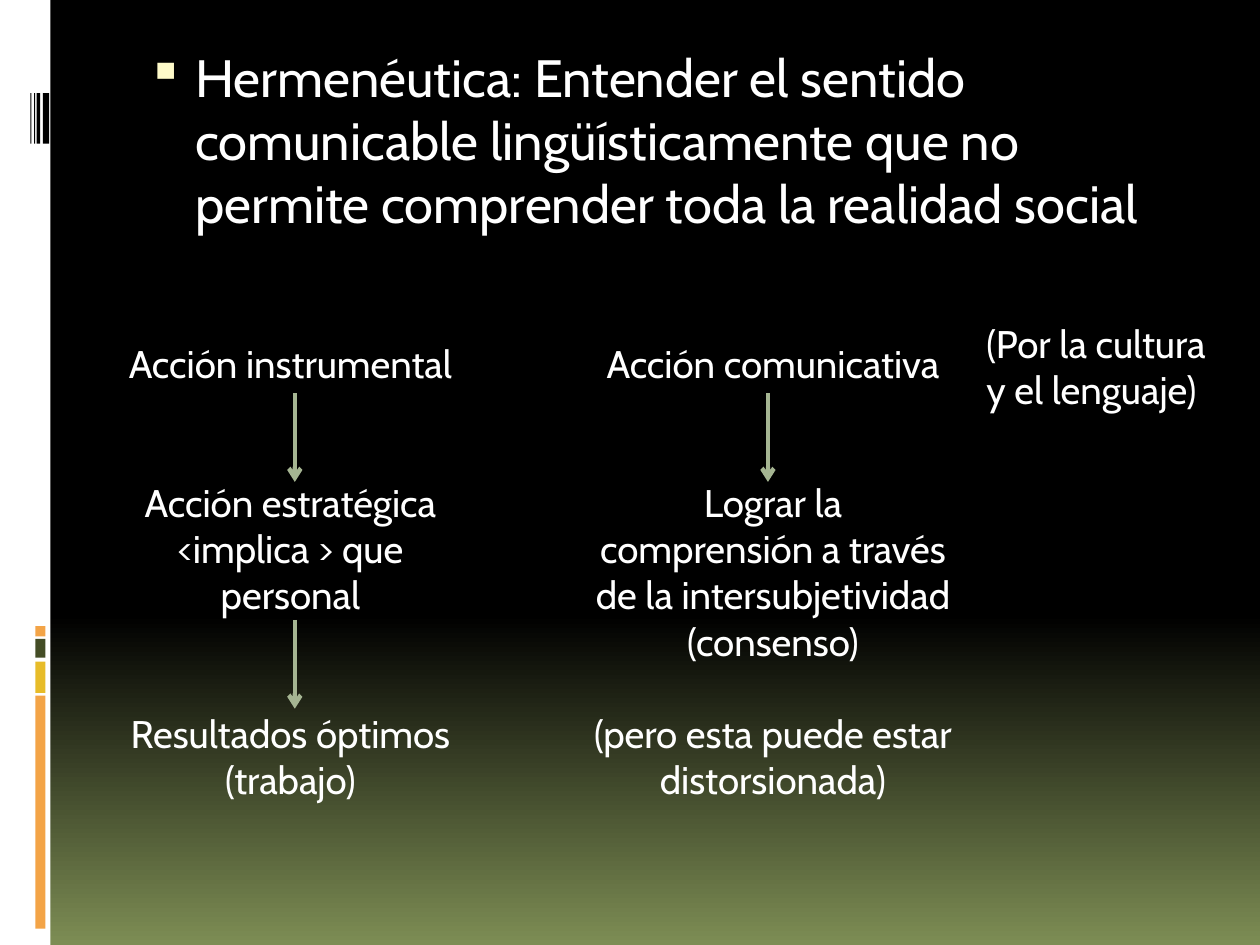
from dataclasses import dataclass

from lxml.etree import SubElement
from pptx import Presentation
from pptx.dml.color import RGBColor
from pptx.enum.shapes import MSO_CONNECTOR, MSO_SHAPE
from pptx.enum.text import MSO_AUTO_SIZE, PP_ALIGN
from pptx.oxml.ns import qn
from pptx.util import Inches, Pt


@dataclass(frozen=True)
class Theme:
    font: str = "Cabin"
    lead_size: float = 30
    body_size: float = 22
    blank_line: float = 26.5
    line_width: float = 2.5
    white: str = "FFFFFF"
    black: str = "000000"
    olive: str = "7D8D54"
    orange: str = "F3A447"
    yellow: str = "E7BC29"
    moss: str = "444D26"
    sage: str = "A5B592"
    cream: str = "FEFAC9"


class Deck:
    """Places elements on a grid of 100 columns by 75 rows."""

    def __init__(self, theme):
        self.t = theme
        self.prs = Presentation()
        self.prs.slide_width, self.prs.slide_height = Inches(10), Inches(7.5)
        self.s = self.prs.slides.add_slide(self.prs.slide_layouts[6])

    def grid(self, *cells):
        # Columns and rows share one unit because the cells are square
        return [round(self.prs.slide_width * c / 100) for c in cells]

    def background(self, start, end, hold):
        fill = self.s.background.fill
        fill.gradient()
        fill.gradient_angle = 270
        for stop, color, pos in zip(fill.gradient_stops, (start, end), (hold, 1)):
            stop.color.rgb = RGBColor.from_string(color)
            stop.position = pos

    def bar(self, x, y, w, h, color):
        sp = self.s.shapes.add_shape(MSO_SHAPE.RECTANGLE, *self.grid(x, y, w, h))
        sp.shadow.inherit = False
        sp.fill.solid()
        sp.fill.fore_color.rgb = RGBColor.from_string(color)
        sp.line.fill.background()

    def text(self, x, y, w, h, items, size, align=PP_ALIGN.LEFT, grow=True):
        """Each item is a paragraph and the space before it in points."""
        tf = self.s.shapes.add_textbox(*self.grid(x, y, w, h)).text_frame
        tf.word_wrap = True
        tf.auto_size = MSO_AUTO_SIZE.SHAPE_TO_FIT_TEXT if grow else MSO_AUTO_SIZE.NONE
        for i, (words, gap) in enumerate(items):
            p = tf.add_paragraph() if i else tf.paragraphs[0]
            p.text = words
            p.alignment = align
            p.space_before = Pt(gap)
            for r in p.runs:
                r.font.name, r.font.size = self.t.font, Pt(size)
                r.font.color.rgb = RGBColor.from_string(self.t.white)
        return tf

    def bullet(self, p, char, color, percent, left, hanging):
        pPr = p._p.get_or_add_pPr()
        pPr.set("marL", str(Inches(left)))
        pPr.set("indent", str(-Inches(hanging)))
        clr = SubElement(pPr, qn("a:buClr"))
        SubElement(clr, qn("a:srgbClr"), val=color)
        SubElement(pPr, qn("a:buSzPct"), val=str(percent * 1000))
        SubElement(pPr, qn("a:buChar"), char=char)

    def arrow(self, x, top, bottom):
        c = self.s.shapes.add_connector(
            MSO_CONNECTOR.STRAIGHT, *self.grid(x, top, x, bottom))
        c.line.color.rgb = RGBColor.from_string(self.t.sage)
        c.line.width = Pt(self.t.line_width)
        SubElement(c.line._get_or_add_ln(), qn("a:tailEnd"), type="arrow")
        SubElement(c._element.spPr, qn("a:effectLst"))


def main():
    t = Theme()
    d = Deck(t)
    d.background(t.black, t.olive, 0.65)

    # Side band with coloured blocks and thin stripes
    d.bar(0, 0, 4, 75, t.white)
    for y, h, color in ((55.2, 18.5, t.orange), (52.5, 2.5, t.yellow),
                        (50.7, 1.5, t.moss), (49.7, 0.8, t.orange)):
        d.bar(2.8, y, 0.8, h, color)
    for x, w in ((3.4, 0.5), (2.9, 0.3), (2.7, 0.1), (2.4, 0.1)):
        d.bar(x, 7.4, w, 4, t.black)

    # Lead statement
    lead = d.text(10, 3.1, 85, 17.2, [
        ("Hermenéutica: Entender el sentido comunicable lingüísticamente "
         "que no permite comprender toda la realidad social", 7),
    ], t.lead_size, grow=False)
    d.bullet(lead.paragraphs[0], "▪", t.cream, 95, 0.45, 0.38)

    # Two columns of actions
    one, two = t.blank_line, 2 * t.blank_line
    columns = (
        (7.8, [("Acción instrumental", 0),
               ("Acción estratégica <implica > que personal", two),
               ("Resultados óptimos (trabajo)", two)]),
        (46.1, [("Acción comunicativa", 0),
                ("Lograr la comprensión a través de la intersubjetividad "
                 "(consenso)", two),
                ("(pero esta puede estar distorsionada)", one)]),
    )
    for x, items in columns:
        d.text(x, 26.5, 30.5, 38, items, t.body_size, PP_ALIGN.CENTER)

    # Side remark
    d.text(77.3, 24.9, 19.5, 8.4, [("(Por la cultura y el lenguaje)", 0)],
           t.body_size)

    # Arrows between the steps
    for x, top in ((23.4, 31.2), (23.4, 49.2), (60.95, 31.2)):
        d.arrow(x, top, top + 7.05)

    d.prs.save("out.pptx")


if __name__ == "__main__":
    main()
